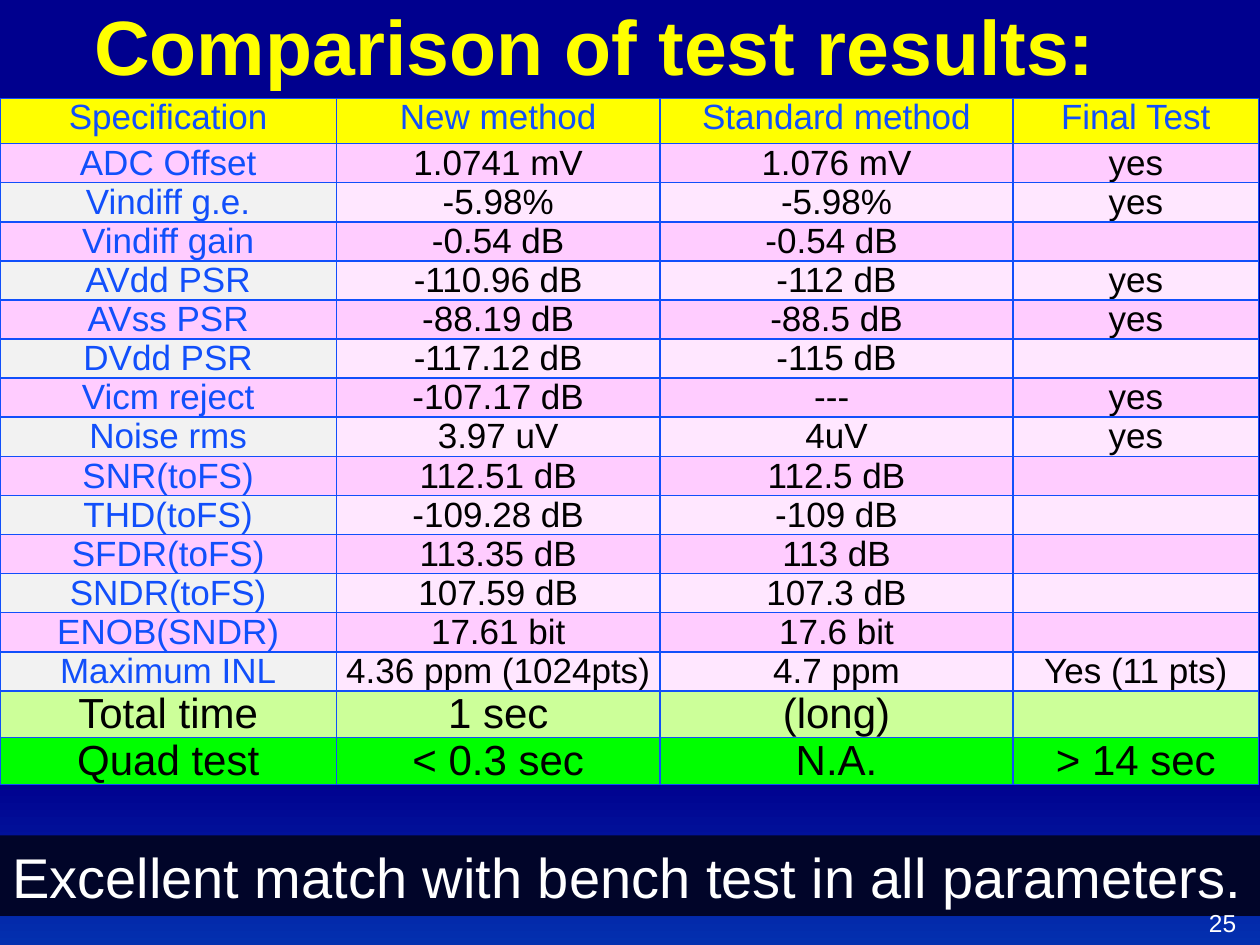
import pptx
import pptx.dml.color
import pptx.enum.shapes
import pptx.enum.text
import pptx.oxml
import pptx.oxml.ns
import pptx.util
from pptx.util import Inches

RGBColor = pptx.dml.color.RGBColor
ALIGN = pptx.enum.text.PP_ALIGN
ANCHOR = pptx.enum.text.MSO_ANCHOR

NAVY = RGBColor(0x00, 0x00, 0x8E)
ROYAL = RGBColor(0x03, 0x30, 0xAF)
INK = RGBColor(0x01, 0x05, 0x29)
BLUE = RGBColor(0x11, 0x4F, 0xFB)
YELLOW = RGBColor(0xFF, 0xFF, 0x00)
PINK = RGBColor(0xFF, 0xCC, 0xFF)
PALE = RGBColor(0xFF, 0xE7, 0xFF)
GREY = RGBColor(0xF2, 0xF2, 0xF2)
LIME = RGBColor(0xCC, 0xFF, 0x99)
GREEN = RGBColor(0x00, 0xFF, 0x00)
BLACK = RGBColor(0x00, 0x00, 0x00)
WHITE = RGBColor(0xFF, 0xFF, 0xFF)

COLS = (2.67, 2.57, 2.8, 1.95)
HEAD = ("Specification", "New method", "Standard method", "Final Test")
SPECS = (
    ("ADC Offset", "1.0741 mV", "1.076 mV", "yes"),
    ("Vindiff g.e.", "-5.98%", "-5.98%", "yes"),
    ("Vindiff gain", "-0.54 dB", "-0.54 dB ", ""),
    ("AVdd PSR", "-110.96 dB", "-112 dB", "yes"),
    ("AVss PSR", "-88.19 dB", "-88.5 dB", "yes"),
    ("DVdd PSR", "-117.12 dB", "-115 dB", ""),
    ("Vicm reject", "-107.17 dB", "--- ", "yes"),
    ("Noise rms", "3.97 uV", "4uV", "yes"),
    ("SNR(toFS)", "112.51 dB", "112.5 dB", ""),
    ("THD(toFS)", "-109.28 dB", "-109 dB", ""),
    ("SFDR(toFS)", "113.35 dB", "113 dB", ""),
    ("SNDR(toFS)", "107.59 dB", "107.3 dB", ""),
    ("ENOB(SNDR)", "17.61 bit", "17.6 bit", ""),
    ("Maximum INL", "4.36 ppm (1024pts)", "4.7 ppm", "Yes (11 pts)"),
)
TOTAL = ("Total time", "1 sec", "(long)", "")
QUAD = ("Quad test", "< 0.3 sec", "N.A.", "> 14 sec")


def add_run(frame, text, size, color, align=ALIGN.LEFT, bold=False):
    para = frame.paragraphs[0]
    para.alignment = align
    if text:
        run = para.add_run()
        run.text = text
        run.font.name = "Arial"
        run.font.size = pptx.util.Pt(size)
        run.font.bold = bold
        run.font.color.rgb = color


def paint_back(slide):
    fill = slide.background.fill
    fill.gradient()
    fill.gradient_angle = 270
    for stop, (place, color) in zip(fill.gradient_stops, ((0.82, NAVY), (1, ROYAL))):
        stop.position = place
        stop.color.rgb = color


def add_border(cell, width=1):
    """Rule all four sides of a cell, given the width in points."""
    props = cell._tc.get_or_add_tcPr()
    for spot, side in enumerate(("lnL", "lnR", "lnT", "lnB")):
        props.insert(spot, pptx.oxml.parse_xml(
            f'<a:{side} {pptx.oxml.ns.nsdecls("a")} w="{pptx.util.Pt(width)}">'
            f'<a:solidFill><a:srgbClr val="{BLUE}"/></a:solidFill></a:{side}>'))


def fill_cell(cell, text, size, color, fill):
    cell.margin_left = cell.margin_right = Inches(0.07)
    cell.margin_top = cell.margin_bottom = 0
    cell.fill.solid()
    cell.fill.fore_color.rgb = fill
    add_run(cell.text_frame, text, size, color, ALIGN.CENTER)
    add_border(cell)


def add_results(slide, left, top, width, height):
    """Add the table; each row has its texts, size, and first and other cells' colours."""
    rows = [(HEAD, 20, (BLUE, YELLOW), (BLUE, YELLOW))]
    for num, texts in enumerate(SPECS):
        first, rest = (GREY, PALE) if num % 2 else (PINK, PINK)
        rows.append((texts, 20, (BLUE, first), (BLACK, rest)))
    rows.append((TOTAL, 24, (BLACK, LIME), (BLACK, LIME)))
    rows.append((QUAD, 24, (BLACK, GREEN), (BLACK, GREEN)))

    table = slide.shapes.add_table(len(rows), len(COLS), left, top, width, height).table
    for col, wide in zip(table.columns, COLS):
        col.width = Inches(wide)
    for num, (texts, size, first, rest) in enumerate(rows):
        table.rows[num].height = Inches(0.26 if num else 0.36)
        for col, text in enumerate(texts):
            color, fill = rest if col else first
            fill_cell(table.cell(num, col), text, size, color, fill)


def add_label(slide, box, text, size, color, align=ALIGN.LEFT,
              anchor=ANCHOR.BOTTOM, bold=False):
    frame = slide.shapes.add_textbox(*box).text_frame
    frame.word_wrap = True
    frame.vertical_anchor = anchor
    add_run(frame, text, size, color, align, bold)


def add_banner(slide, box, text):
    shape = slide.shapes.add_shape(pptx.enum.shapes.MSO_SHAPE.RECTANGLE, *box)
    shape.shadow.inherit = False
    shape.fill.solid()
    shape.fill.fore_color.rgb = INK
    shape.line.fill.background()
    shape.text_frame.word_wrap = True
    shape.text_frame.vertical_anchor = ANCHOR.BOTTOM
    add_run(shape.text_frame, text, 32, WHITE)


def main():
    deck = pptx.Presentation()
    deck.slide_width, deck.slide_height = Inches(10), Inches(7.5)
    slide = deck.slides.add_slide(deck.slide_layouts[6])
    paint_back(slide)
    add_results(slide, 0, Inches(0.78), Inches(10), Inches(5.83))
    add_label(slide, (Inches(0.65), Inches(-0.07), Inches(8.95), Inches(0.84)),
              "Comparison of test results:", 44, YELLOW, bold=True)
    add_banner(slide, (0, Inches(6.63), Inches(10), Inches(0.64)),
               "Excellent match with bench test in all parameters.")
    add_label(slide, (Inches(7.58), Inches(7.06), Inches(2.33), Inches(0.52)),
              "25", 14, WHITE, ALIGN.RIGHT, ANCHOR.MIDDLE)
    deck.save("out.pptx")


if __name__ == "__main__":
    main()
